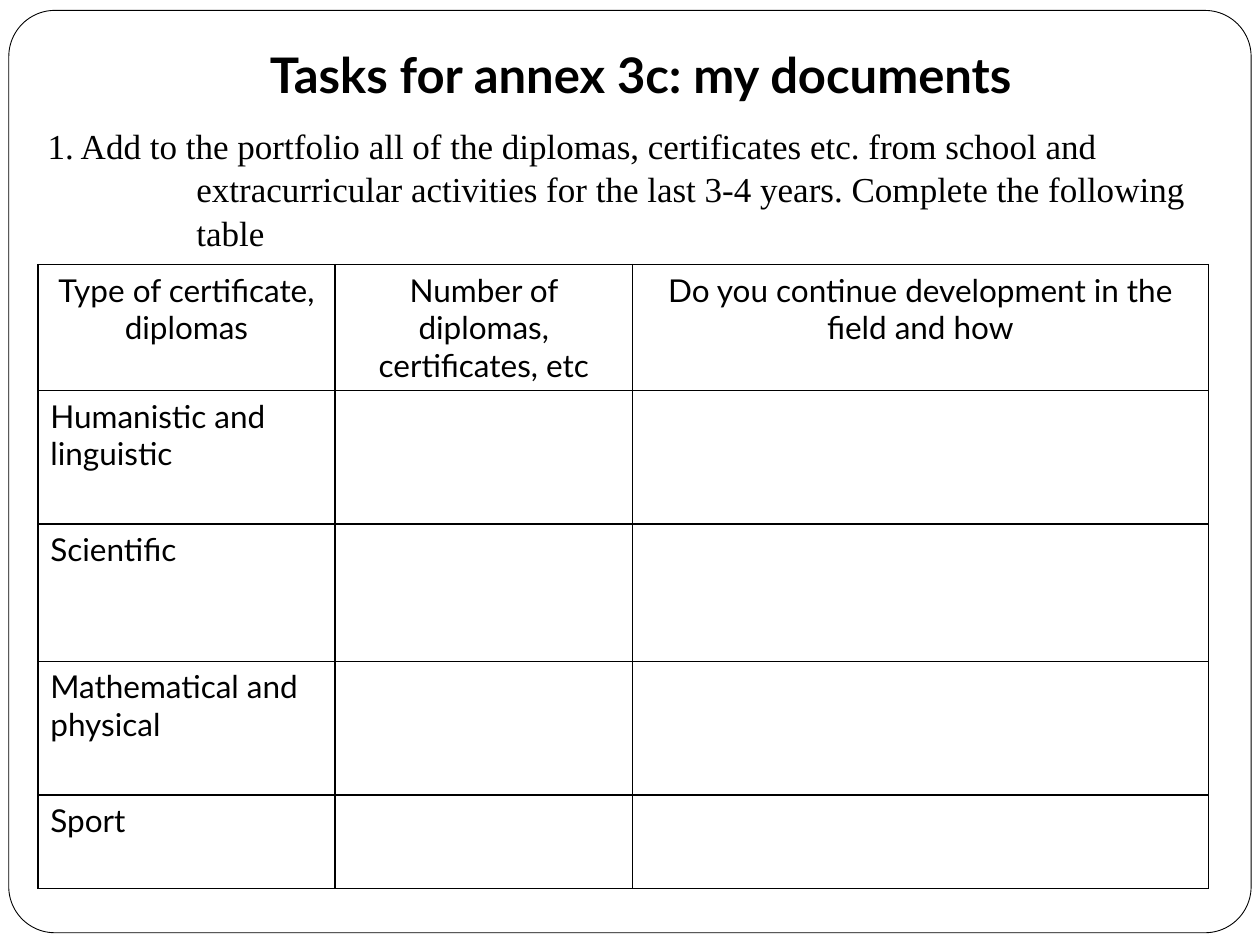
from lxml import etree
from pptx import Presentation
from pptx.dml.color import RGBColor
from pptx.enum.shapes import MSO_SHAPE
from pptx.enum.text import MSO_ANCHOR, PP_ALIGN
from pptx.oxml.ns import qn
from pptx.util import Inches, Pt

ROUND = MSO_SHAPE.ROUNDED_RECTANGLE
LEFT, CENTER = PP_ALIGN.LEFT, PP_ALIGN.CENTER
TOP, BOTTOM = MSO_ANCHOR.TOP, MSO_ANCHOR.BOTTOM
WIDE, HIGH = 10, 7.5

# Table content
COLS = [2.36, 2.36, 4.57]
ROWS = [1, 1.06, 1.09, 1.06, 0.74]
HEADS = [
    "Type of certificate,\ndiplomas",
    "Number of diplomas, certificates, etc",
    "Do you continue development in the field and how",
]
FIELDS = ["Humanistic and linguistic", "Scientific", "Mathematical and physical", "Sport"]


def color(code):
    return RGBColor.from_string(code)


class Deck:
    """Style and current slide; places are shares of the slide's size."""

    ink, paper = "000000", "FFFFFF"
    sans, serif = "Lato", "Times New Roman"

    def __init__(self):
        self.show = Presentation()
        self.show.slide_width, self.show.slide_height = Inches(WIDE), Inches(HIGH)
        self.slide = self.show.slides.add_slide(self.show.slide_layouts[6])

    def place(self, x, y, w, h):
        return [Inches(x * WIDE), Inches(y * HIGH), Inches(w * WIDE), Inches(h * HIGH)]

    def fill_in(self, frame, text, size, font, align=LEFT, bold=False):
        frame.text = text
        for para in frame.paragraphs:
            para.alignment = align
            for run in para.runs:
                run.font.size, run.font.name, run.font.bold = Pt(size), font, bold
                run.font.color.rgb = color(self.ink)

    def panel(self, box, round_by):
        shape = self.slide.shapes.add_shape(ROUND, *self.place(*box))
        shape.adjustments[0] = round_by
        shape.shadow.inherit = False
        shape.fill.solid()
        shape.fill.fore_color.rgb = color(self.paper)
        shape.line.color.rgb = color(self.ink)
        shape.line.width = Pt(0.5)

    def text(self, box, text, size, font, align=LEFT, bold=False, anchor=TOP):
        frame = self.slide.shapes.add_textbox(*self.place(*box)).text_frame
        frame.word_wrap = True
        frame.vertical_anchor = anchor
        self.fill_in(frame, text, size, font, align, bold)
        return frame

    def hang(self, para, depth):
        props = para._p.get_or_add_pPr()
        props.set("marL", str(Inches(depth)))
        props.set("indent", str(-Inches(depth)))

    def border(self, cell):
        props = cell._tc.get_or_add_tcPr()
        for spot, side in enumerate(("lnL", "lnR", "lnT", "lnB")):
            line = etree.Element(qn("a:" + side), w=str(Pt(1)))
            fill = etree.SubElement(line, qn("a:solidFill"))
            etree.SubElement(fill, qn("a:srgbClr"), val=self.ink)
            props.insert(spot, line)

    def table(self, x, y, cols, rows, heads, names):
        box = self.place(x, y, sum(cols) / WIDE, sum(rows) / HIGH)
        grid = self.slide.shapes.add_table(len(rows), len(cols), *box).table
        for col, width in zip(grid.columns, cols):
            col.width = Inches(width)
        for row, height in zip(grid.rows, rows):
            row.height = Inches(height)
        for cell in grid.iter_cells():
            cell.fill.solid()
            cell.fill.fore_color.rgb = color(self.paper)
            self.border(cell)
        for col, head in enumerate(heads):
            self.fill_in(grid.cell(0, col).text_frame, head, 18, self.sans, CENTER)
        for row, name in enumerate(names, 1):
            self.fill_in(grid.cell(row, 0).text_frame, name, 18, self.sans)


def main():
    deck = Deck()

    # Frame
    deck.panel((0.007, 0.011, 0.986, 0.976), 0.05)

    # Title
    title = deck.text((0.067, 0.028, 0.883, 0.095), "Tasks for annex 3c: my documents",
                      28, deck.sans, CENTER, True, BOTTOM)
    title.margin_bottom = Inches(0.1)

    # Task
    task = deck.text(
        (0.028, 0.123, 0.938, 0.15),
        "1. Add to the portfolio all of the diplomas, certificates etc. from school and "
        "extracurricular activities for the last 3-4 years. Complete the following table",
        20, deck.serif)
    para = task.paragraphs[0]
    para.space_before, para.line_spacing = Pt(5.8), 1.04
    deck.hang(para, 1.18)

    # Certificates
    deck.table(0.03, 0.28, COLS, ROWS, HEADS, FIELDS)

    deck.show.save("out.pptx")


if __name__ == "__main__":
    main()
